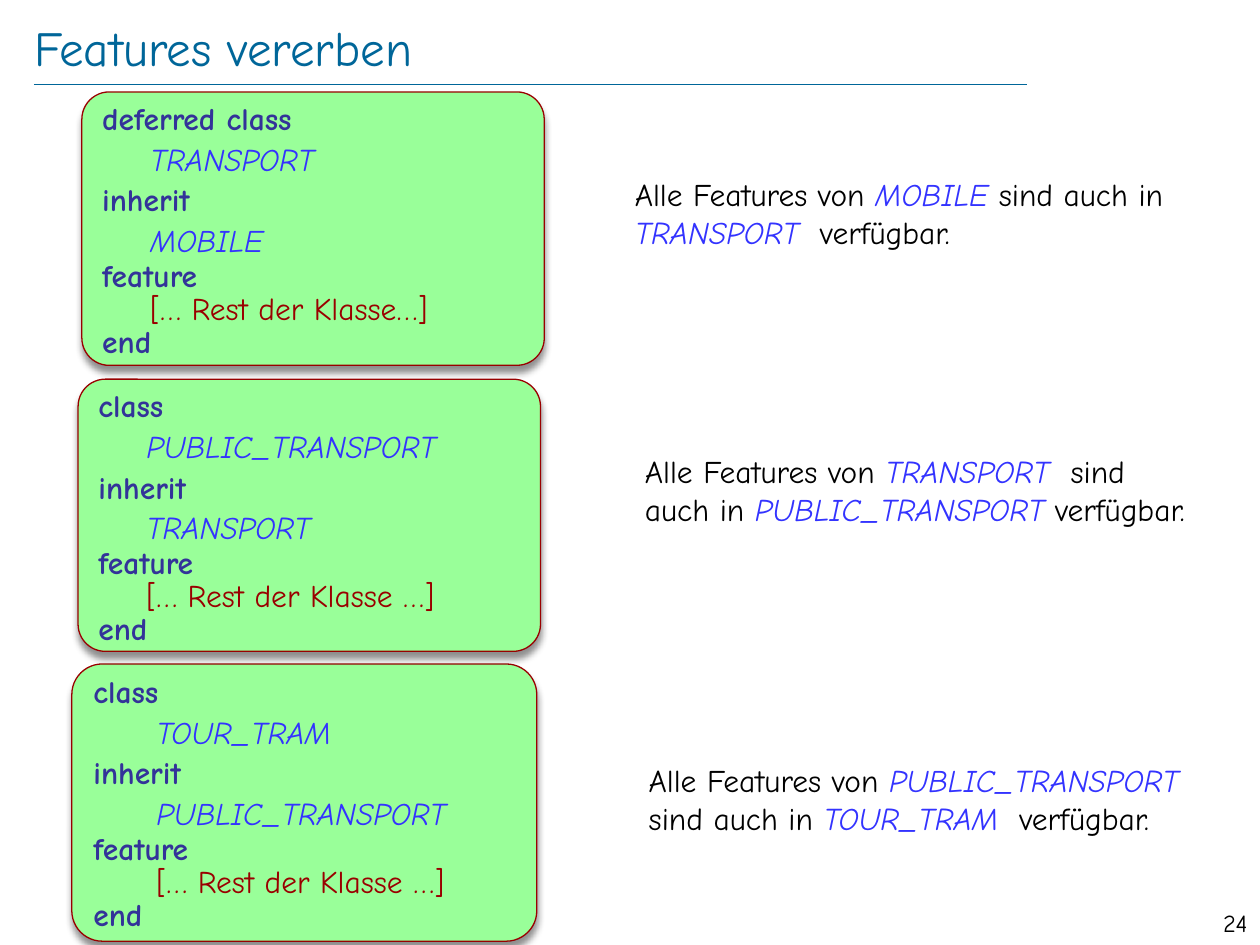
from dataclasses import dataclass

from lxml.etree import SubElement
from pptx import Presentation
from pptx.dml.color import RGBColor
from pptx.enum.shapes import MSO_CONNECTOR, MSO_SHAPE
from pptx.enum.text import MSO_ANCHOR, MSO_AUTO_SIZE, PP_ALIGN
from pptx.oxml.ns import qn
from pptx.util import Inches, Pt


@dataclass(frozen=True)
class Theme:
    font: str = "Comic Neue"
    accent: str = "006699"
    text: str = "000000"
    keyword: str = "333399"
    class_name: str = "3333FF"
    rest: str = "990000"
    box_fill: str = "99FF99"
    title_size: int = 28
    body_size: int = 18
    number_size: int = 14


class SlideBuilder:
    def __init__(self, slide, theme):
        self.s = slide
        self.theme = theme

    def style(self, r, color, size=None, bold=False, italic=False):
        r.font.name = self.theme.font
        r.font.size = Pt(size or self.theme.body_size)
        r.font.color.rgb = RGBColor.from_string(color)
        r.font.bold = bold
        r.font.italic = italic

    def place(self, sp, box):
        sp.left, sp.top, sp.width, sp.height = (Inches(v) for v in box)

    def title(self, text, box):
        sp = self.s.shapes.title
        self.place(sp, box)
        tf = sp.text_frame
        tf.text = text
        tf.auto_size = MSO_AUTO_SIZE.NONE
        tf.vertical_anchor = MSO_ANCHOR.MIDDLE
        tf.margin_left = tf.margin_right = tf.margin_top = tf.margin_bottom = 0
        p = tf.paragraphs[0]
        p.alignment = PP_ALIGN.LEFT
        self.style(p.runs[0], self.theme.accent, self.theme.title_size)

    def rule(self, x1, x2, y):
        line = self.s.shapes.add_connector(
            MSO_CONNECTOR.STRAIGHT, Inches(x1), Inches(y), Inches(x2), Inches(y))
        line.line.color.rgb = RGBColor.from_string(self.theme.accent)
        line.line.width = Pt(0.25)
        SubElement(line._element.spPr, qn("a:effectLst"))

    def text_box(self, box):
        sp = self.s.shapes.add_textbox(*(Inches(v) for v in box))
        sp.text_frame.word_wrap = True
        return sp.text_frame.paragraphs[0]

    def page_number(self, text, box):
        p = self.text_box(box)
        p.text = text
        p.alignment = PP_ALIGN.RIGHT
        self.style(p.runs[0], self.theme.text, self.theme.number_size)

    def note(self, text, box):
        """Class names stand between asterisks."""
        p = self.text_box(box)
        for i, part in enumerate(text.split("*")):
            r = p.add_run()
            r.text = part
            is_name = i % 2 == 1
            color = self.theme.class_name if is_name else self.theme.text
            self.style(r, color, italic=is_name)

    def drop_shadow(self, sp):
        effects = SubElement(sp._element.spPr, qn("a:effectLst"))
        shadow = SubElement(effects, qn("a:outerShdw"), blurRad=str(Pt(4)),
                            dist=str(Pt(4)), dir="5400000", rotWithShape="0")
        color = SubElement(shadow, qn("a:srgbClr"), val="000000")
        SubElement(color, qn("a:alpha"), val="43000")

    def round_placeholder(self, sp, adj):
        geom = SubElement(sp._element.spPr, qn("a:prstGeom"), prst="roundRect")
        guides = SubElement(geom, qn("a:avLst"))
        SubElement(guides, qn("a:gd"), name="adj", fmla=f"val {round(adj * 100000)}")

    def indent(self, p, margin, hanging, tabs):
        pPr = p._p.get_or_add_pPr()
        pPr.set("marL", str(Inches(margin)))
        pPr.set("indent", str(-Inches(hanging)))
        SubElement(pPr, qn("a:buNone"))
        if tabs:
            tab_list = SubElement(pPr, qn("a:tabLst"))
            for pos in tabs:
                SubElement(tab_list, qn("a:tab"), pos=str(Inches(pos)), algn="l")

    def class_box(self, box, head, name, parent, rest, adj=0.1, body=False):
        # Outline
        if body:
            sp = self.s.placeholders[1]
            self.place(sp, box)
            self.round_placeholder(sp, adj)
        else:
            sp = self.s.shapes.add_shape(
                MSO_SHAPE.ROUNDED_RECTANGLE, *(Inches(v) for v in box))
            sp.adjustments[0] = adj
        sp.fill.solid()
        sp.fill.fore_color.rgb = RGBColor.from_string(self.theme.box_fill)
        sp.line.color.rgb = RGBColor.from_string(self.theme.rest)
        sp.line.width = Pt(0.75)
        self.drop_shadow(sp)

        # Class text: keywords bold, class names italic
        tf = sp.text_frame
        tf.word_wrap = True
        tf.auto_size = MSO_AUTO_SIZE.NONE
        tf.vertical_anchor = MSO_ANCHOR.TOP
        keyword = (self.theme.keyword, True, False)
        class_name = (self.theme.class_name, False, True)
        lines = [
            (head, keyword, 0.8),
            ("\t" + name, class_name, 0.8),
            ("inherit", keyword, 0.8),
            ("\t" + parent, class_name, 0.8),
            ("feature", keyword, 0.6),
            ("\t" + rest, (self.theme.rest, False, False), 0.6),
            ("end", keyword, 0.6),
        ]
        margin, tabs = (0, (0.5, 1)) if body else (0.38, ())
        for i, (text, (color, bold, italic), spacing) in enumerate(lines):
            p = tf.add_paragraph() if i else tf.paragraphs[0]
            p.text = text
            self.indent(p, margin, margin, tabs)
            p.alignment = PP_ALIGN.LEFT
            p.line_spacing = spacing
            p.space_before = Pt(6 if i else 0)
            self.style(p.runs[0], color, bold=bold, italic=italic)


def main():
    prs = Presentation()
    prs.slide_width, prs.slide_height = Inches(10), Inches(7.5)
    s = prs.slides.add_slide(prs.slide_layouts[1])
    b = SlideBuilder(s, Theme())

    # Heading and page number
    b.rule(0.27, 8.15, 0.67)
    b.page_number("24", (9.45, 7.16, 0.55, 0.24))
    b.title("Features vererben", (0.27, 0.13, 8.69, 0.48))

    # Class texts, from the lowest box up
    b.class_box((0.57, 5.27, 3.69, 2.2), "class", "TOUR_TRAM",
                "PUBLIC_TRANSPORT", "[… Rest der Klasse …]", adj=0.11, body=True)
    b.class_box((0.62, 3.01, 3.67, 2.16), "class", "PUBLIC_TRANSPORT",
                "TRANSPORT", "[… Rest der Klasse …]")
    b.class_box((0.65, 0.73, 3.67, 2.17), "deferred class", "TRANSPORT",
                "MOBILE", "[… Rest der Klasse…]")

    # Explanations
    b.note("Alle Features von *MOBILE* sind auch in *TRANSPORT  *verfügbar.",
           (4.94, 1.34, 4.5, 0.72))
    b.note("Alle Features von *TRANSPORT * sind auch in *PUBLIC_TRANSPORT *verfügbar.",
           (5.02, 3.54, 4.5, 0.72))
    b.note("Alle Features von *PUBLIC_TRANSPORT * sind auch in *TOUR_TRAM  *verfügbar.",
           (5.05, 5.99, 4.5, 1.04))

    prs.save("out.pptx")


if __name__ == "__main__":
    main()
